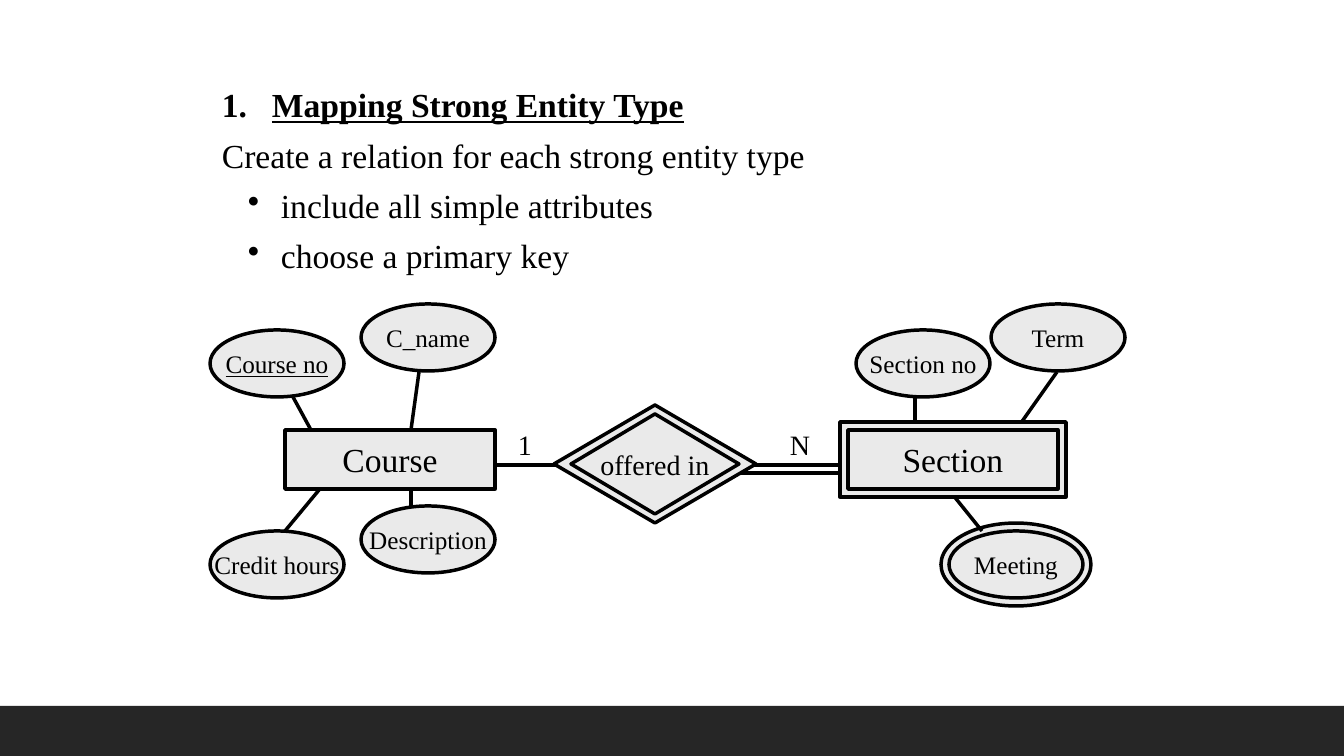
from dataclasses import dataclass

from lxml import etree
from pptx import Presentation
from pptx.dml.color import RGBColor
from pptx.enum.shapes import MSO_CONNECTOR, MSO_SHAPE
from pptx.enum.text import MSO_ANCHOR, PP_ALIGN
from pptx.oxml.ns import qn
from pptx.util import Pt

RECT, OVAL, DIAMOND = MSO_SHAPE.RECTANGLE, MSO_SHAPE.OVAL, MSO_SHAPE.DIAMOND
STRAIGHT = MSO_CONNECTOR.STRAIGHT
CENTER, MIDDLE = PP_ALIGN.CENTER, MSO_ANCHOR.MIDDLE
EMU_PER_PX = 914400 / 100.8


@dataclass(frozen=True)
class Theme:
    font: str = "Times New Roman"
    ink: RGBColor = RGBColor(0, 0, 0)
    node: RGBColor = RGBColor(0xEA, 0xEA, 0xEA)
    bar: RGBColor = RGBColor(0x26, 0x26, 0x26)
    large: int = 24
    medium: int = 20
    small: int = 18
    stroke: float = 2.5


THEME = Theme()


def px(*lengths):
    return [round(n * EMU_PER_PX) for n in lengths]


def style_run(p, size, bold=False, underline=False):
    for r in p.runs:
        r.font.name, r.font.size = THEME.font, Pt(size)
        r.font.bold, r.font.underline = bold, underline
        r.font.color.rgb = THEME.ink


def add_node(s, kind, x, y, w, h, text="", size=THEME.small, underline=False, rim=None):
    """Outlined shape; rim is the gap to a second, outer outline."""
    if rim:
        dx, dy = rim
        add_node(s, kind, x - dx, y - dy, w + 2 * dx, h + 2 * dy)
    sp = s.shapes.add_shape(kind, *px(x, y, w, h))
    sp.shadow.inherit = False
    sp.fill.solid()
    sp.fill.fore_color.rgb = THEME.node
    sp.line.color.rgb = THEME.ink
    sp.line.width = Pt(THEME.stroke)
    if text:
        tf = sp.text_frame
        tf.text = text
        tf.word_wrap = False
        tf.vertical_anchor = MIDDLE
        tf.paragraphs[0].alignment = CENTER
        style_run(tf.paragraphs[0], size, underline=underline)


def add_link(s, x1, y1, x2, y2):
    line = s.shapes.add_connector(STRAIGHT, *px(x1, y1, x2, y2))
    line.line.color.rgb = THEME.ink
    line.line.width = Pt(THEME.stroke)
    etree.SubElement(line._element.spPr, qn("a:effectLst"))


def add_text_box(s, x, y, w, h, text):
    tf = s.shapes.add_textbox(*px(x, y, w, h)).text_frame
    tf.word_wrap = True
    tf.text = text
    return tf


def set_bullet(p, margin, hanging, tag, **attrs):
    pPr = p._p.get_or_add_pPr()
    left, indent = px(margin, -hanging)
    pPr.set("marL", str(left))
    pPr.set("indent", str(indent))
    etree.SubElement(pPr, qn(tag), attrs)


def bottom_bar(s, x, y, w, h):
    sp = s.shapes.add_shape(RECT, *px(x, y, w, h))
    sp.shadow.inherit = False
    sp.fill.solid()
    sp.fill.fore_color.rgb = THEME.bar
    sp.line.fill.background()


def mapping_rule(s, x, y, w, h):
    lines = ["Mapping Strong Entity Type",
             "Create a relation for each strong entity type",
             "include all simple attributes",
             "choose a primary key"]
    tf = add_text_box(s, x, y, w, h, "\n".join(lines))
    for i, p in enumerate(tf.paragraphs):
        p.line_spacing = 0.9
        p.space_before, p.space_after = Pt(6), Pt(4)
        style_run(p, THEME.large, bold=i == 0, underline=i == 0)
    heading, _, *steps = tf.paragraphs
    set_bullet(heading, 50, 50, "a:buAutoNum", type="arabicPeriod")
    for p in steps:
        p.level = 1
        set_bullet(p, 59, 33, "a:buChar", char="•")


def entity(s, x, y, name, offset, attributes, links, weak=False):
    """Entity with its attributes; all offsets are from the group's corner."""
    for text, dx, dy, options in attributes:
        add_node(s, OVAL, x + dx, y + dy, 134, 67, text, **options)
    for x1, y1, x2, y2 in links:
        add_link(s, x + x1, y + y1, x + x2, y + y2)
    add_node(s, RECT, x + offset, y + 126, 210, 59, name, THEME.large,
             rim=(8, 8) if weak else None)


def relationship(s, x, y, w, h):
    # Single line to Course, double line to Section
    add_link(s, x, y + 60, x + w, y + 60)
    add_link(s, x + 235, y + 68, x + w, y + 68)
    add_node(s, DIAMOND, x + 76, y + 9, 168, h - 18, "offered in", THEME.medium, rim=(17, 9))
    # Cardinalities
    for text, dx, width in (("1", 13, 33), ("N", 285, 50)):
        tf = add_text_box(s, x + dx, y + 18, width, 43, text)
        style_run(tf.paragraphs[0], THEME.medium)


def entity_slide(prs):
    s = prs.slides.add_slide(prs.slide_layouts[6])
    bottom_bar(s, 0, 706, 1344, 50)
    mapping_rule(s, 212, 84, 832, 199)
    # Strong entity
    entity(s, 210, 304, "Course", 75,
           [("Course no", 0, 26, {"underline": True}), ("C_name", 151, 0, {}),
            ("Credit hours", 0, 227, {}), ("Description", 151, 202, {})],
           [(83, 93, 101, 126), (109, 186, 75, 227),
            (209, 68, 201, 126), (201, 186, 201, 202)])
    relationship(s, 495, 405, 353, 118)
    # Weak entity
    entity(s, 840, 304, "Section", 8,
           [("Section no", 16, 26, {}), ("Term", 151, 0, {}),
            ("Meeting", 109, 227, {"rim": (8, 8)})],
           [(75, 93, 75, 126), (217, 68, 176, 126), (109, 186, 142, 227)],
           weak=True)


def main():
    prs = Presentation()
    prs.slide_width, prs.slide_height = px(1344, 756)
    entity_slide(prs)
    prs.save("out.pptx")


if __name__ == "__main__":
    main()
